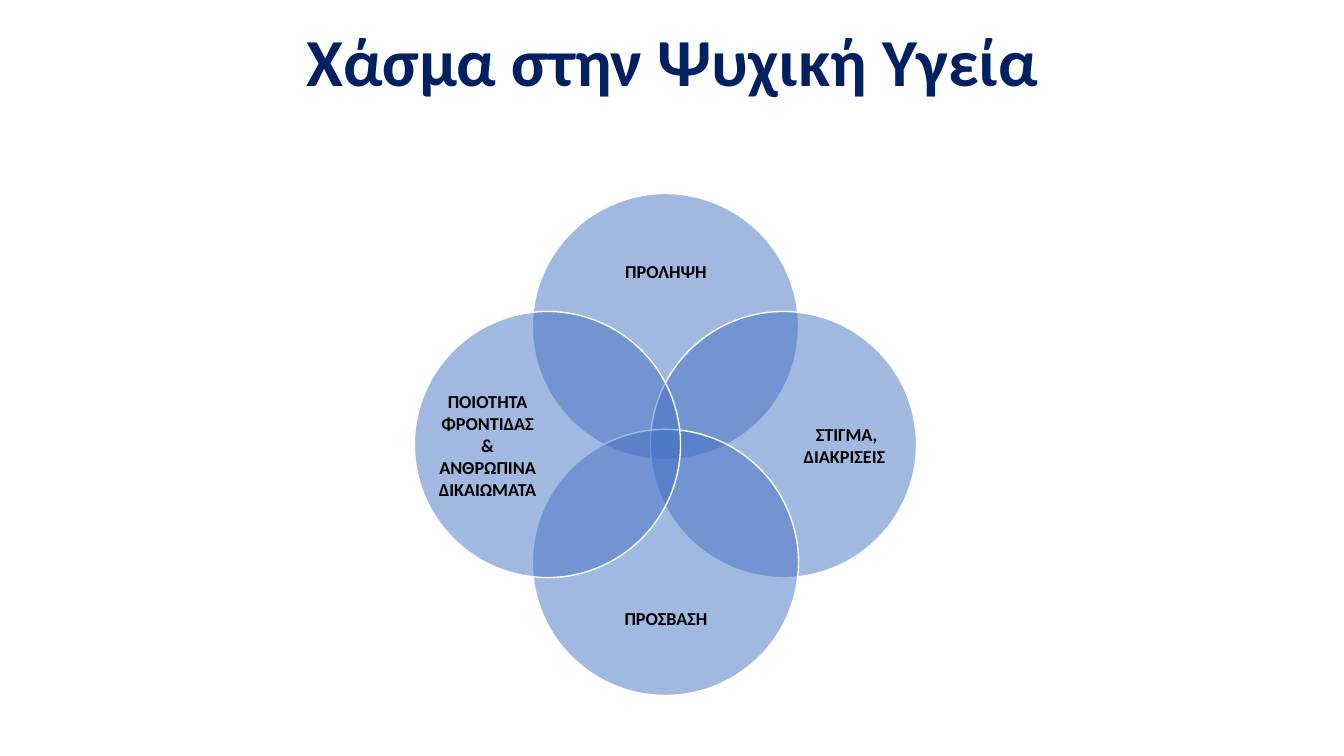
import dataclasses

import lxml.etree
import pptx
import pptx.dml.color
import pptx.enum.shapes
import pptx.enum.text
import pptx.oxml.ns
import pptx.presentation
import pptx.slide
import pptx.util

PX = 9144
WIDE, HIGH = 1333, 750
MID_X, MID_Y = 660, 441
SIZE = 264
REACH = 117
FONT = "Calibri"
COLORS = {"title": "002060", "text": "000000", "disc": "4472C4", "edge": "FFFFFF"}


@dataclasses.dataclass(frozen=True)
class Box:
    left: int
    top: int
    wide: int
    high: int

    def emu(self) -> list[int]:
        return [side * PX for side in dataclasses.astuple(self)]


@dataclasses.dataclass(frozen=True)
class Petal:
    text: str
    dx: int
    dy: int

    def disc(self) -> Box:
        return around(MID_X + self.dx * REACH, MID_Y + self.dy * REACH, SIZE, SIZE)

    def label(self) -> Box:
        wide, high = (101, 203) if self.dx else (203, 84)
        return around(MID_X + self.dx * 177, MID_Y + self.dy * 172, wide, high)


PETALS = [
    Petal("ΠΡΟΛΗΨΗ", 0, -1),
    Petal(" ΣΤΙΓΜΑ, ΔΙΑΚΡΙΣΕΙΣ", 1, 0),
    Petal("ΠΡΟΣΒΑΣΗ", 0, 1),
    Petal("ΠΟΙΟΤΗΤΑ ΦΡΟΝΤΙΔΑΣ & ΑΝΘΡΩΠΙΝΑ ΔΙΚΑΙΩΜΑΤΑ", -1, 0),
]


def around(x: int, y: int, wide: int, high: int) -> Box:
    return Box(x - wide // 2, y - high // 2, wide, high)


def shade(name: str) -> pptx.dml.color.RGBColor:
    return pptx.dml.color.RGBColor.from_string(COLORS[name])


def add_text(slide: pptx.slide.Slide, box: Box, text: str, size: int, color: str,
             anchor: pptx.enum.text.MSO_ANCHOR, inset: int = 0, pitch: float = 1.0) -> None:
    frame = slide.shapes.add_textbox(*box.emu()).text_frame
    frame.word_wrap = True
    frame.vertical_anchor = anchor
    frame.margin_left = frame.margin_right = inset * 2 * PX
    frame.margin_top = frame.margin_bottom = inset * PX
    para = frame.paragraphs[0]
    para.alignment = pptx.enum.text.PP_ALIGN.CENTER
    para.line_spacing = pitch
    run = para.add_run()
    run.text = text
    run.font.name = FONT
    run.font.size = pptx.util.Pt(size)
    run.font.bold = True
    run.font.color.rgb = shade(color)


def add_disc(slide: pptx.slide.Slide, box: Box) -> None:
    disc = slide.shapes.add_shape(pptx.enum.shapes.MSO_SHAPE.OVAL, *box.emu())
    disc.shadow.inherit = False
    disc.fill.solid()
    disc.fill.fore_color.rgb = shade("disc")
    tint = disc.element.spPr.find("./" + pptx.oxml.ns.qn("a:solidFill"))[0]
    lxml.etree.SubElement(tint, pptx.oxml.ns.qn("a:alpha"), val="50000")
    disc.line.color.rgb = shade("edge")
    disc.line.width = pptx.util.Pt(1)


def build() -> pptx.presentation.Presentation:
    deck = pptx.Presentation()
    deck.slide_width, deck.slide_height = WIDE * PX, HIGH * PX
    slide = deck.slides.add_slide(deck.slide_layouts[6])
    anchor = pptx.enum.text.MSO_ANCHOR
    add_text(slide, Box(167, 23, 1000, 156), "Χάσμα στην Ψυχική Υγεία",
             48, "title", anchor.TOP, inset=5, pitch=0.9)
    for petal in PETALS:
        add_disc(slide, petal.disc())
        add_text(slide, petal.label(), petal.text, 13, "text", anchor.MIDDLE)
    return deck


if __name__ == "__main__":
    build().save("out.pptx")
